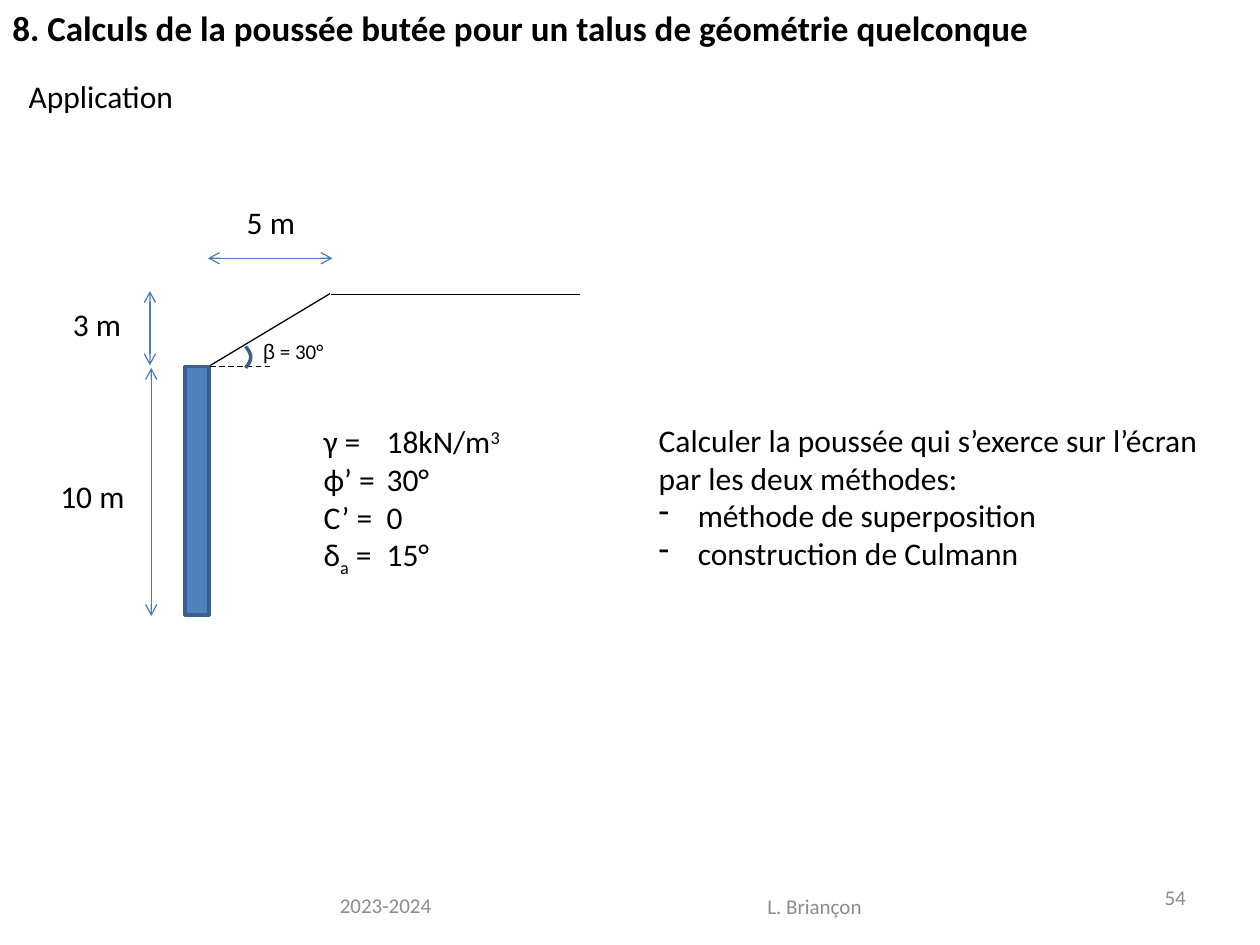
import math
from dataclasses import dataclass

from lxml import etree
from pptx import Presentation
from pptx import util as u
from pptx.dml.color import RGBColor
from pptx.enum import dml, shapes, text
from pptx.oxml import ns


@dataclass(frozen=True)
class Theme:
    font: str = "Calibri"
    greek_font: str = "Arial"
    ink: str = "000000"
    muted: str = "8C8C8C"
    wall: str = "4F81BD"
    wall_edge: str = "3A5F8C"
    dimension: str = "4B7EBC"
    title: int = 20
    body: int = 18
    small: int = 12
    thin: float = 0.75
    thick: float = 2


THEME = Theme()


def set_line(line, color, width):
    line.color.rgb = RGBColor.from_string(color)
    line.width = u.Pt(width)


def add_indent(paragraph, left, bullet=None):
    properties = paragraph._p.get_or_add_pPr()
    properties.set("marL", str(u.Inches(left)))
    if bullet:
        properties.set("indent", str(-u.Inches(left)))
        etree.SubElement(properties, ns.qn("a:buChar")).set("char", bullet)


def add_text(parent, at, lines, size=THEME.body, color=THEME.ink, bold=False,
             wrap=False, grow=True, align=text.PP_ALIGN.LEFT,
             anchor=text.MSO_ANCHOR.TOP, indent=0, bullets_from=None):
    frame = parent.add_textbox(*map(u.Inches, at)).text_frame
    frame.word_wrap = wrap
    frame.auto_size = (text.MSO_AUTO_SIZE.SHAPE_TO_FIT_TEXT if grow
                       else text.MSO_AUTO_SIZE.NONE)
    frame.vertical_anchor = anchor
    for index, line in enumerate(lines):
        paragraph = frame.add_paragraph() if index else frame.paragraphs[0]
        paragraph.alignment = align
        if bullets_from is not None and index >= bullets_from:
            add_indent(paragraph, 0.31, "-")
        elif indent:
            add_indent(paragraph, indent)
        for part in [line] if isinstance(line, str) else line:
            words, changes = (part, {}) if isinstance(part, str) else part
            run = paragraph.add_run()
            run.text = words
            run.font.name = changes.get("font", THEME.font)
            run.font.size = u.Pt(size)
            run.font.bold = bold
            run.font.color.rgb = RGBColor.from_string(color)
            if "baseline" in changes:
                run._r.get_or_add_rPr().set("baseline", str(changes["baseline"] * 1000))


def add_line(parent, start, end, color=THEME.ink, dashed=False, arrows=False):
    connector = parent.add_connector(
        shapes.MSO_CONNECTOR.STRAIGHT, *map(u.Inches, (*start, *end)))
    set_line(connector.line, color, THEME.thin)
    if dashed:
        connector.line.dash_style = dml.MSO_LINE.DASH
    if arrows:
        outline = connector.line._get_or_add_ln()
        for tag in ("a:headEnd", "a:tailEnd"):
            etree.SubElement(outline, ns.qn(tag)).set("type", "arrow")
    etree.SubElement(connector._element.spPr, ns.qn("a:effectLst"))


def add_dimension(parent, start, end, label, label_at):
    add_line(parent, start, end, color=THEME.dimension, arrows=True)
    add_text(parent, label_at, [label])


def add_wall(parent, at):
    wall = parent.add_shape(shapes.MSO_SHAPE.RECTANGLE, *map(u.Inches, at))
    wall.shadow.inherit = False
    wall.fill.solid()
    wall.fill.fore_color.rgb = RGBColor.from_string(THEME.wall)
    set_line(wall.line, THEME.wall_edge, THEME.thick)


def add_angle_mark(parent, left, top, width, height, steps=12):
    points = [(u.Inches(left + width * math.sin(math.pi * step / steps)),
               u.Inches(top + height * (1 - step / steps)))
              for step in range(steps + 1)]
    builder = parent.build_freeform(*points[0])
    builder.add_line_segments(points[1:], close=False)
    mark = builder.convert_to_shape()
    mark.shadow.inherit = False
    mark.fill.background()
    set_line(mark.line, THEME.wall_edge, THEME.thick)


def add_section(parent):
    add_wall(parent, (1.47, 2.91, 0.19, 1.97))
    add_line(parent, (1.67, 2.9), (2.62, 2.33))
    add_line(parent, (2.63, 2.34), (4.6, 2.34))
    add_dimension(parent, (1.65, 2.05), (2.64, 2.05), "5 m", (1.86, 1.56, 0.59, 0.4))
    add_dimension(parent, (1.19, 2.31), (1.19, 2.9), "3 m", (0.48, 2.37, 0.59, 0.4))
    add_dimension(parent, (1.2, 2.92), (1.2, 4.89), "10 m", (0.38, 3.74, 0.72, 0.4))
    add_line(parent, (1.67, 2.91), (2.17, 2.91), dashed=True)
    add_angle_mark(parent, 1.95, 2.75, 0.04, 0.17)
    add_text(parent, (1.99, 2.64, 0.69, 0.3),
             [[("β", {"font": THEME.greek_font}), " = 30°"]], size=THEME.small)
    add_text(parent, (2.47, 3.3, 2.33, 1.31),
             [["γ =\t18kN/m", ("3", {"baseline": 30})],
              "ϕ’ =\t30°",
              "C’ =\t0",
              ["δ", ("a", {"baseline": -25}), " =\t15°"]], wrap=True)


def add_footer(parent):
    center, right = text.PP_ALIGN.CENTER, text.PP_ALIGN.RIGHT
    for at, words, align, indent in (
            ((0.63, 6.98, 4.09, 0.4), "2023-2024", center, 0.77),
            ((4.88, 6.99, 3.17, 0.4), "L. Briançon", center, 0),
            ((7.18, 6.92, 2.33, 0.4), "54", right, 0)):
        add_text(parent, at, [words], size=THEME.small, color=THEME.muted, wrap=True,
                 grow=False, align=align, anchor=text.MSO_ANCHOR.MIDDLE, indent=indent)


def main():
    deck = Presentation()
    deck.slide_width, deck.slide_height = u.Inches(10), u.Inches(7.5)
    slide = deck.slides.add_slide(deck.slide_layouts[6])
    add_footer(slide.shapes)
    add_text(slide.shapes, (0, 0, 8.34, 0.44),
             ["8. Calculs de la poussée butée pour un talus de géométrie quelconque"],
             size=THEME.title, bold=True)
    add_text(slide.shapes, (0.13, 0.56, 1.36, 0.4), ["Application"])
    add_section(slide.shapes.add_group_shape().shapes)
    add_text(slide.shapes, (5.13, 3.29, 4.53, 1.31),
             ["Calculer la poussée qui s’exerce sur l’écran",
              "par les deux méthodes:",
              "méthode de superposition",
              "construction de Culmann"], bullets_from=2)
    deck.save("out.pptx")


if __name__ == "__main__":
    main()
